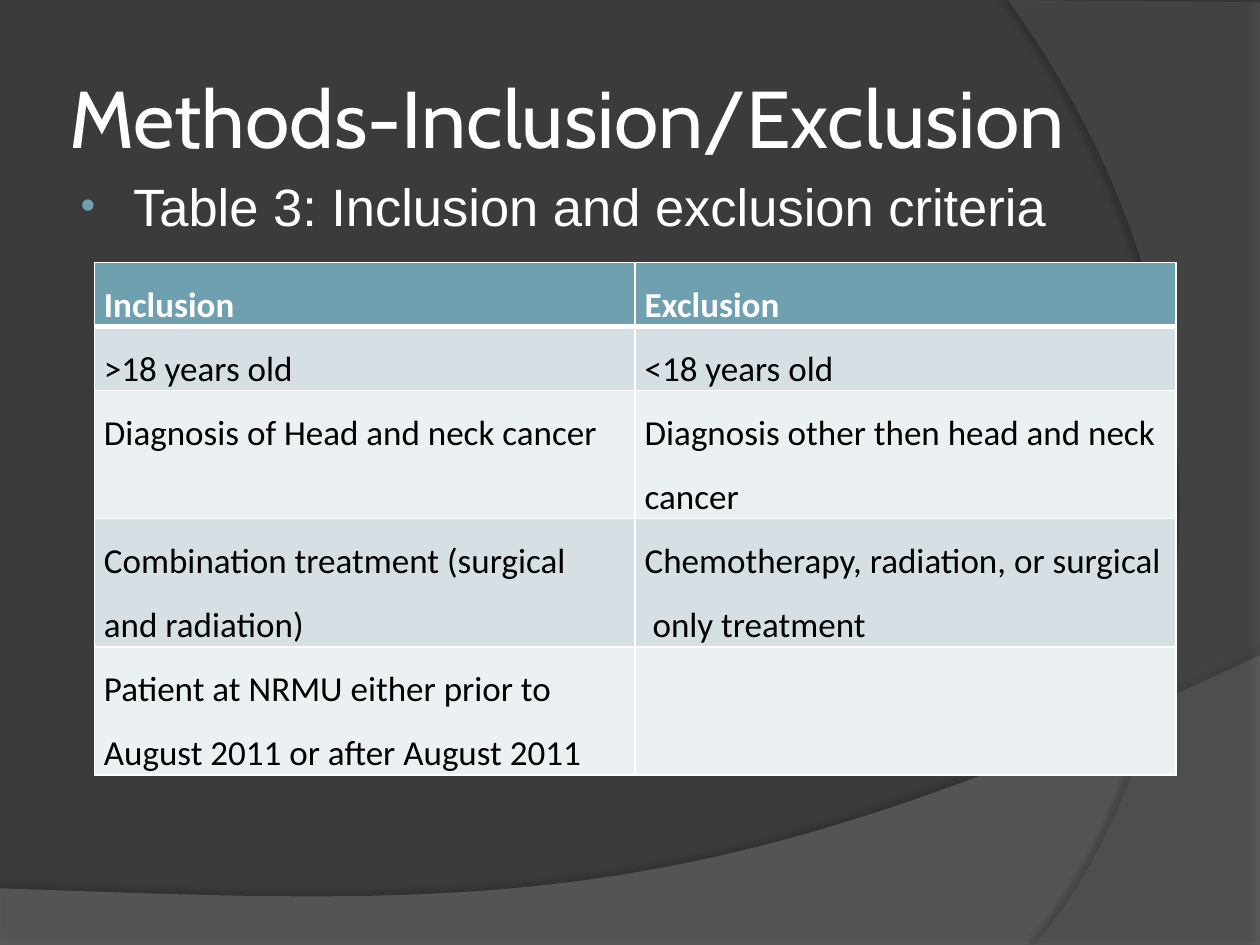
import lxml.etree
import pptx
import pptx.dml.color
import pptx.enum.text
import pptx.oxml.ns
import pptx.util

Pt = pptx.util.Pt
qn = pptx.oxml.ns.qn
WHITE, BLACK, DARK, TEAL = "FFFFFF", "000000", "3B3B3B", "6EA0B0"
BANDS = ("D5DFE4", "EBF0F2")


def color(hex_value):
    return pptx.dml.color.RGBColor.from_string(hex_value)


def add_node(parent, tag, **attributes):
    node = lxml.etree.SubElement(parent, qn(tag))
    for key, value in attributes.items():
        node.set(key, str(value))
    return node


def apply(target, formats):
    for key, value in formats.items():
        setattr(target, key, value)


def bezier(start, control_1, control_2, end, steps=60):
    for step in range(steps + 1):
        t = step / steps
        u = 1 - t
        yield tuple(
            u**3 * a + 3 * u * u * t * b + 3 * u * t * t * c + t**3 * d
            for a, b, c, d in zip(start, control_1, control_2, end)
        )


class CriteriaSlide:
    heading_font = {"name": "Cabin", "size": Pt(46)}
    caption_font = {"name": "Arial", "size": Pt(30)}
    cell_font = {"name": "Calibri", "size": Pt(20)}
    cell_margins = {
        "margin_left": Pt(5.4),
        "margin_right": Pt(5.4),
        "margin_top": 0,
        "margin_bottom": 0,
    }

    def __init__(self, deck):
        self.slide = deck.slides.add_slide(deck.slide_layouts[5])
        self.slide.background.fill.solid()
        self.slide.background.fill.fore_color.rgb = color(DARK)

    def add_text(self, paragraph, text, font, hex_value, bold=False):
        run = paragraph.add_run()
        run.text = text
        apply(run.font, {**font, "bold": bold})
        run.font.color.rgb = color(hex_value)

    def swoosh(self, corners, curve, fill, opacity, shadow_opacity, distance, angle):
        points = [(Pt(x), Pt(y)) for x, y in [*corners, *bezier(*curve)]]
        builder = self.slide.shapes.build_freeform(*points[0])
        builder.add_line_segments(points[1:], close=True)
        shape = builder.convert_to_shape()
        shape.fill.solid()
        shape.fill.fore_color.rgb = color(fill)
        shape.line.fill.background()
        shape.shadow.inherit = False
        properties = shape.element.spPr
        fill_color = properties.find(qn("a:solidFill")).find(qn("a:srgbClr"))
        add_node(fill_color, "a:alpha", val=opacity * 1000)
        shadow = add_node(
            properties.find(qn("a:effectLst")), "a:outerShdw",
            blurRad=Pt(4), dist=Pt(distance), dir=angle * 60000,
            algn="ctr", rotWithShape=0,
        )
        shadow_color = add_node(shadow, "a:srgbClr", val=BLACK)
        add_node(shadow_color, "a:alpha", val=shadow_opacity * 1000)

    def title(self, text, left, top, width, height):
        heading = self.slide.shapes.title
        heading.element.getparent().append(heading.element)
        apply(heading, {"left": Pt(left), "top": Pt(top),
                        "width": Pt(width), "height": Pt(height)})
        frame = heading.text_frame
        apply(frame, {
            "margin_left": Pt(3.6), "margin_right": Pt(3.6),
            "margin_top": Pt(3.6), "margin_bottom": Pt(3.6),
            "word_wrap": True,
            "auto_size": pptx.enum.text.MSO_AUTO_SIZE.NONE,
            "vertical_anchor": pptx.enum.text.MSO_ANCHOR.MIDDLE,
        })
        paragraph = frame.paragraphs[0]
        paragraph.alignment = pptx.enum.text.PP_ALIGN.LEFT
        self.add_text(paragraph, text, self.heading_font, WHITE)

    def bullet(self, text, left, top, width, height):
        caption = self.slide.shapes.add_textbox(Pt(left), Pt(top), Pt(width), Pt(height))
        caption.text_frame.word_wrap = True
        paragraph = caption.text_frame.paragraphs[0]
        paragraph.space_before = Pt(4)
        self.add_text(paragraph, text, self.caption_font, WHITE)
        properties = paragraph._p.get_or_add_pPr()
        properties.set("marL", str(Pt(33)))
        properties.set("indent", str(Pt(-30)))
        add_node(add_node(properties, "a:buClr"), "a:srgbClr", val=TEAL)
        add_node(properties, "a:buSzPct", val=80000)
        add_node(properties, "a:buFont", typeface="Arial")
        add_node(properties, "a:buChar", char="•")

    def borders(self, cell, widths):
        properties = cell._tc.get_or_add_tcPr()
        for position, (side, width) in enumerate(widths.items()):
            line = lxml.etree.Element(qn(f"a:ln{side}"), w=str(Pt(width)))
            add_node(add_node(line, "a:solidFill"), "a:srgbClr", val=WHITE)
            properties.insert(position, line)

    def table(self, rows, left, top, column_width, row_heights):
        columns = len(rows[0])
        grid = self.slide.shapes.add_table(
            len(rows), columns, Pt(left), Pt(top),
            Pt(column_width * columns), Pt(sum(row_heights)),
        ).table
        for column in grid.columns:
            column.width = Pt(column_width)
        for index, (texts, height) in enumerate(zip(rows, row_heights)):
            grid.rows[index].height = Pt(height)
            is_header = index == 0
            for column, text in enumerate(texts):
                cell = grid.cell(index, column)
                apply(cell, self.cell_margins)
                cell.fill.solid()
                cell.fill.fore_color.rgb = color(TEAL if is_header else BANDS[(index - 1) % 2])
                self.borders(cell, {"L": 1, "R": 1, "T": 3 if index == 1 else 1,
                                    "B": 3 if is_header else 1})
                if text:
                    paragraph = cell.text_frame.paragraphs[0]
                    paragraph.line_spacing = 1.5
                    self.add_text(paragraph, text, self.cell_font,
                                  WHITE if is_header else BLACK, is_header)


def main():
    deck = pptx.Presentation()
    apply(deck, {"slide_width": Pt(720), "slide_height": Pt(540)})
    criteria = CriteriaSlide(deck)
    criteria.swoosh(
        [(0, 540), (720, 540)],
        [(720, 374.4), (402.5, 524.9), (281.5, 517.7), (0, 507.6)],
        "7F7F7F", 45, 35, 3.5, 270,
    )
    criteria.swoosh(
        [(720, 1.4), (720, 540)],
        [(591, 540), (673.2, 445.7), (733, 216), (576, 0)],
        "5E5E5E", 40, 45, 4, 180,
    )
    criteria.title("Methods-Inclusion/Exclusion", 36, 21.6, 588, 90)
    criteria.bullet("Table 3: Inclusion and exclusion criteria", 36, 95.8, 588, 50)
    criteria.table(
        [
            ("Inclusion", "Exclusion"),
            (">18 years old", "<18 years old"),
            ("Diagnosis of Head and neck cancer", "Diagnosis other then head and neck cancer"),
            ("Combination treatment (surgical and radiation)",
             "Chemotherapy, radiation, or surgical  only treatment"),
            ("Patient at NRMU either prior to August 2011 or after August 2011", ""),
        ],
        54, 150, 309, [36.6, 36.6, 73.2, 73.2, 73.2],
    )
    deck.save("out.pptx")


if __name__ == "__main__":
    main()
